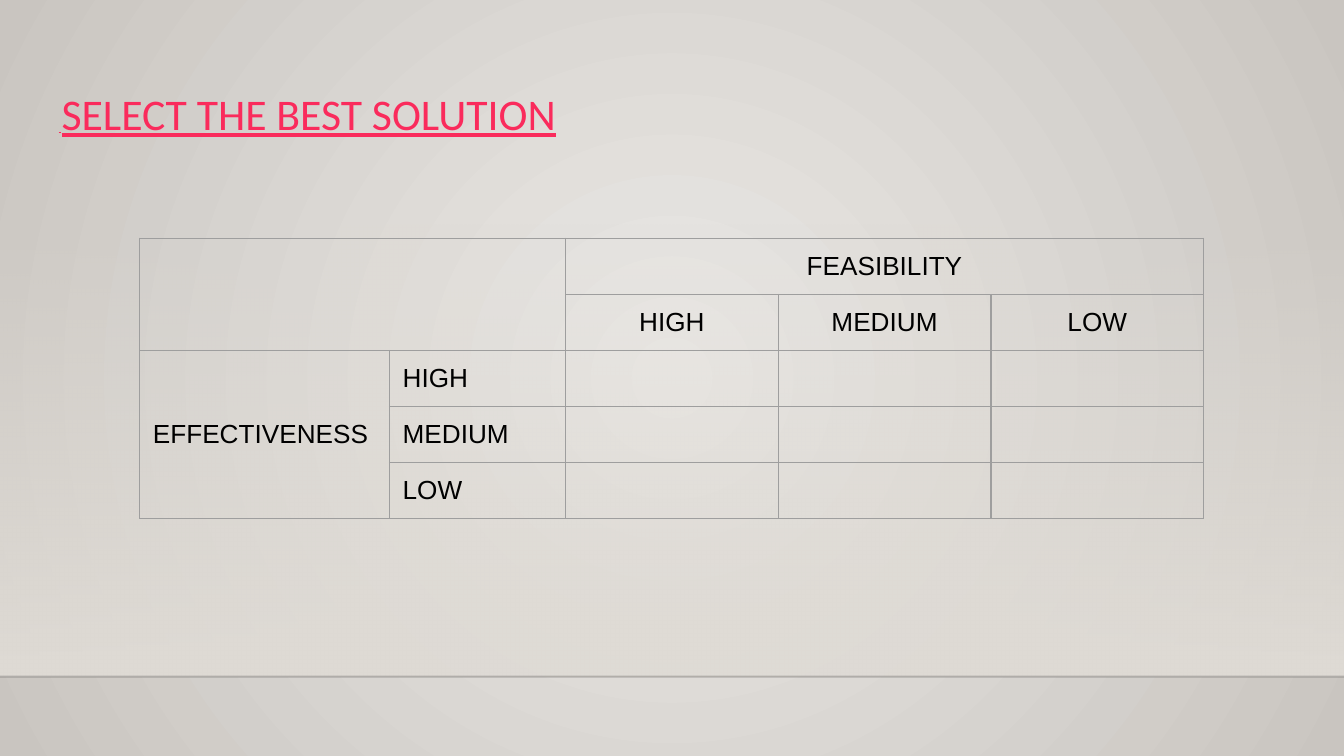
"""Build the solution selection slide: a title over a feasibility and effectiveness grid."""
from pptx import Presentation
from pptx.dml.color import RGBColor
from pptx.enum.shapes import MSO_CONNECTOR, MSO_SHAPE
from pptx.enum.text import MSO_ANCHOR, PP_ALIGN
from pptx.oxml import parse_xml
from pptx.oxml.ns import nsdecls, qn
from pptx.util import Cm, Pt

COLORS = {
    "center": "EBE9E6", "edge": "C9C5C0", "wall": "DFDBD5", "floor_line": "000001",
    "title": "FA2B5C", "text": "000000", "grid": "9E9E9E",
}
TITLE_RUNS = [(" ", 6.3, "Times New Roman"), ("SELECT THE BEST SOLUTION", 23.4, "Calibri")]
LEVELS = ["HIGH", "MEDIUM", "LOW"]
HEADINGS = {(0, 2): "FEASIBILITY", (2, 0): "EFFECTIVENESS"}
HEADINGS.update({(1, 2 + i): level for i, level in enumerate(LEVELS)})
HEADINGS.update({(2 + i, 1): level for i, level in enumerate(LEVELS)})
MERGES = [((0, 0), (1, 1)), ((0, 2), (0, 4)), ((2, 0), (4, 0))]
COLUMN_WIDTHS = [4.72, 3.33, 4.02, 4.02, 4.02]
ROW_HEIGHT = 1.06
ROW_COUNT = 2 + len(LEVELS)
WIDTH, HEIGHT = 25.4, 14.28
WALL_TOP, FLOOR = 4.22, 12.78
INSET = Cm(0.25)


def set_gradient(fill, element, stops, direction):
    fill.gradient()
    stop_xml = "".join(
        f'<a:gs pos="{position}"><a:srgbClr val="{COLORS[color]}">'
        f'<a:alpha val="{alpha}"/></a:srgbClr></a:gs>'
        for position, color, alpha in stops
    )
    default = element.find(".//" + qn("a:gradFill"))
    default.getparent().replace(default, parse_xml(
        f'<a:gradFill {nsdecls("a")} rotWithShape="1">'
        f"<a:gsLst>{stop_xml}</a:gsLst>{direction}</a:gradFill>"
    ))


def add_run(paragraph, text, size, font, color):
    run = paragraph.add_run()
    run.text = text
    run.font.size = Pt(size)
    run.font.name = font
    run.font.color.rgb = RGBColor.from_string(COLORS[color])
    return run


def add_backdrop(slide):
    set_gradient(
        slide.background.fill, slide.element,
        [(0, "center", 100000), (100000, "edge", 100000)],
        '<a:path path="circle"><a:fillToRect l="50000" t="50000" r="50000" b="50000"/></a:path>',
    )
    wall = slide.shapes.add_shape(
        MSO_SHAPE.RECTANGLE, 0, Cm(WALL_TOP), Cm(WIDTH), Cm(FLOOR - WALL_TOP))
    wall.shadow.inherit = False
    wall.line.fill.background()
    set_gradient(
        wall.fill, wall.element, [(0, "wall", 0), (100000, "wall", 100000)],
        '<a:lin ang="5400000" scaled="0"/>',
    )
    floor_line = slide.shapes.add_connector(
        MSO_CONNECTOR.STRAIGHT, 0, Cm(FLOOR), Cm(WIDTH), Cm(FLOOR))
    floor_line.line.width = Pt(1)
    floor_line.line.color.rgb = RGBColor.from_string(COLORS["floor_line"])
    floor_line.element.find(".//" + qn("a:srgbClr")).append(
        parse_xml(f'<a:alpha {nsdecls("a")} val="20000"/>'))
    floor_line.element.spPr.append(parse_xml(f'<a:effectLst {nsdecls("a")}/>'))


def add_title(slide):
    title = slide.shapes.add_textbox(Cm(0.86), Cm(1.24), Cm(23.67), Cm(1.6)).text_frame
    title.word_wrap = True
    title.margin_left = title.margin_right = title.margin_top = title.margin_bottom = INSET
    paragraph = title.paragraphs[0]
    paragraph.line_spacing = 1.15
    paragraph.space_after = Pt(12)
    for text, size, font in TITLE_RUNS:
        add_run(paragraph, text, size, font, "title").font.underline = True


def style_cell(cell):
    properties = cell._tc.get_or_add_tcPr()
    for side in "LRTB":
        properties.append(parse_xml(
            f'<a:ln{side} {nsdecls("a")} w="{Pt(0.75)}"><a:solidFill>'
            f'<a:srgbClr val="{COLORS["grid"]}"/></a:solidFill></a:ln{side}>'
        ))
    cell.fill.background()
    cell.margin_left = cell.margin_right = INSET
    cell.margin_top = cell.margin_bottom = 0


def add_grid(slide):
    grid = slide.shapes.add_table(
        ROW_COUNT, len(COLUMN_WIDTHS), Cm(2.64), Cm(4.5),
        Cm(sum(COLUMN_WIDTHS)), Cm(ROW_HEIGHT * ROW_COUNT)).table
    grid.first_row = grid.horz_banding = False
    for column, width in zip(grid.columns, COLUMN_WIDTHS):
        column.width = Cm(width)
    for row in grid.rows:
        row.height = Cm(ROW_HEIGHT)
        for cell in row.cells:
            style_cell(cell)
    for first, last in MERGES:
        grid.cell(*first).merge(grid.cell(*last))
    for (row, column), heading in HEADINGS.items():
        cell = grid.cell(row, column)
        cell.margin_top = cell.margin_bottom = INSET
        paragraph = cell.text_frame.paragraphs[0]
        paragraph.alignment = PP_ALIGN.CENTER if row < 2 else PP_ALIGN.LEFT
        add_run(paragraph, heading, 14, "Arial", "text")
    grid.cell(2, 0).vertical_anchor = MSO_ANCHOR.MIDDLE


def main():
    presentation = Presentation()
    presentation.slide_width, presentation.slide_height = Cm(WIDTH), Cm(HEIGHT)
    slide = presentation.slides.add_slide(presentation.slide_layouts[6])
    add_backdrop(slide)
    add_grid(slide)
    add_title(slide)
    presentation.save("out.pptx")


if __name__ == "__main__":
    main()
